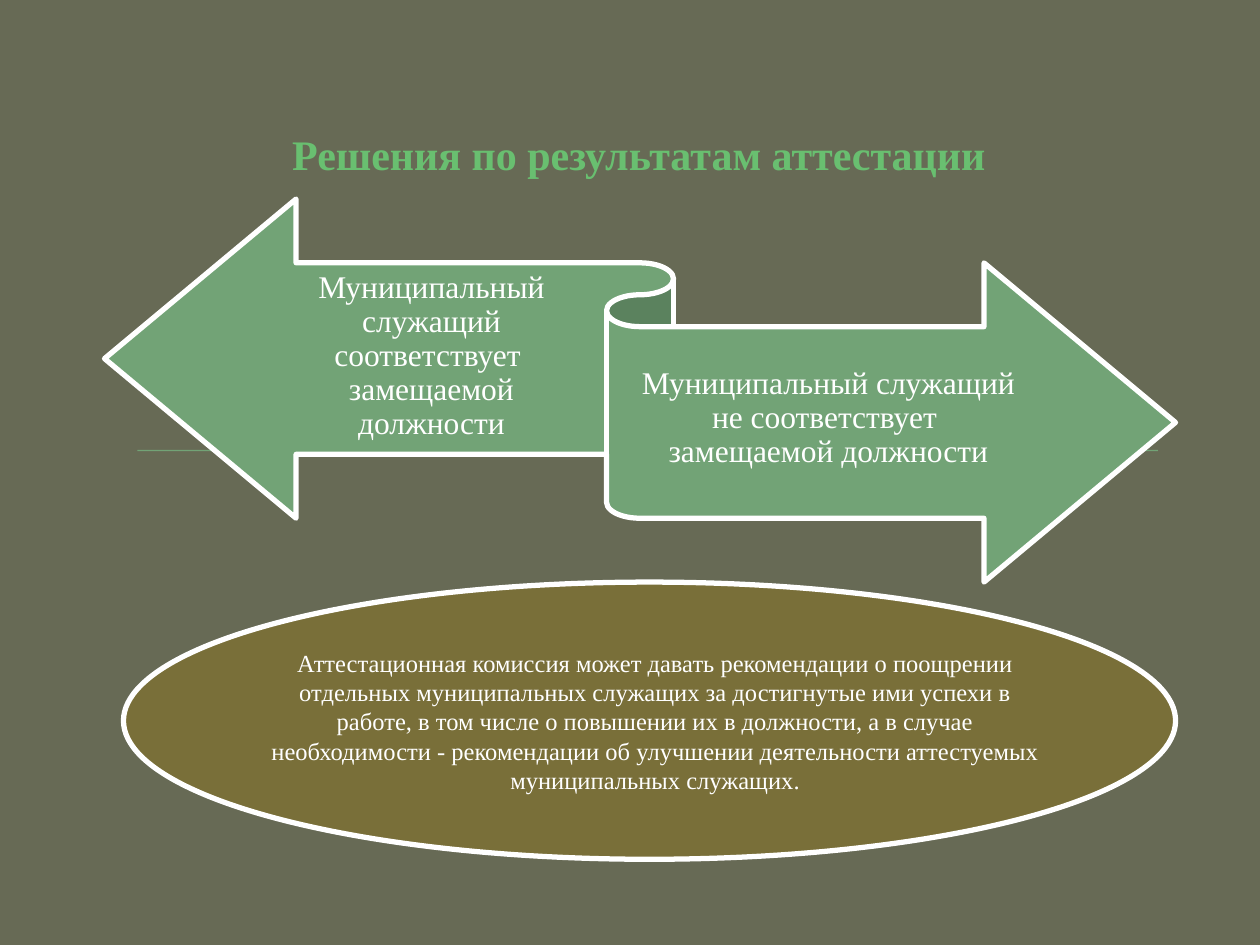
from pptx import Presentation
from pptx.dml.color import RGBColor
from pptx.enum import shapes, text
from pptx.util import Inches, Pt

GREEN, WHITE = "72A376", "FFFFFF"


def color(value):
    return RGBColor.from_string(value)


def write(box, words, size, tint, margins, anchor):
    frame = box.text_frame
    frame.word_wrap = True
    frame.auto_size = text.MSO_AUTO_SIZE.NONE
    frame.vertical_anchor = anchor
    frame.margin_left = frame.margin_right = Inches(margins[0])
    frame.margin_top = frame.margin_bottom = Inches(margins[1])
    frame.text = words
    para = frame.paragraphs[0]
    para.alignment = text.PP_ALIGN.CENTER
    font = para.runs[0].font
    font.name = "Times New Roman"
    font.size = Pt(size)
    font.color.rgb = color(tint)
    return para


deck = Presentation()
deck.slide_width, deck.slide_height = Inches(10), Inches(7.5)
page = deck.slides.add_slide(deck.slide_layouts[5])
page.background.fill.solid()
page.background.fill.fore_color.rgb = color("676A55")

# Title
title = page.shapes.title
title.left, title.top = Inches(0.79), Inches(0.92)
title.width, title.height = Inches(8.5), Inches(0.55)
para = write(title, "Решения по результатам аттестации", 24, "69BF70",
             (0.1, 0.05), text.MSO_ANCHOR.BOTTOM)
para.runs[0].font.bold = True
para._p.get_or_add_pPr().set("marL", str(Inches(0.06)))

# Thin rule, two-way ribbon and ellipse
kinds = shapes.MSO_SHAPE
for kind, place, fill, outlined in [
    (kinds.RECTANGLE, (1.09, 3.57, 8.1, 0.01), GREEN, False),
    (kinds.LEFT_RIGHT_RIBBON, (0.83, 1.58, 8.5, 3.04), GREEN, True),
    (kinds.OVAL, (0.98, 4.62, 8.35, 2.2), "796F39", True),
]:
    shape = page.shapes.add_shape(kind, *map(Inches, place))
    shape.shadow.inherit = False
    shape.fill.solid()
    shape.fill.fore_color.rgb = color(fill)
    if outlined:
        shape.line.color.rgb = color(WHITE)
        shape.line.width = Pt(3)
    else:
        shape.line.fill.background()

# The two decisions on the ribbon
for place, words in [
    ((2.16, 2.08, 2.53, 1.5),
     "Муниципальный служащий соответствует  замещаемой должности"),
    ((5.08, 2.57, 2.99, 1.5),
     "Муниципальный служащий не соответствует  замещаемой должности"),
]:
    box = page.shapes.add_textbox(*map(Inches, place))
    para = write(box, words, 18, WHITE, (0, 0.07), text.MSO_ANCHOR.MIDDLE)
    para.line_spacing = 0.9

# Recommendation in the ellipse
box = page.shapes.add_textbox(*map(Inches, (2.01, 5.09, 6.38, 1.31)))
write(box,
      "Аттестационная комиссия может давать рекомендации о поощрении отдельных "
      "муниципальных служащих за достигнутые ими успехи в работе, в том числе о "
      "повышении их в должности, а в случае необходимости - рекомендации об "
      "улучшении деятельности аттестуемых муниципальных служащих.",
      14, WHITE, (0.1, 0.05), text.MSO_ANCHOR.TOP)

deck.save("out.pptx")
